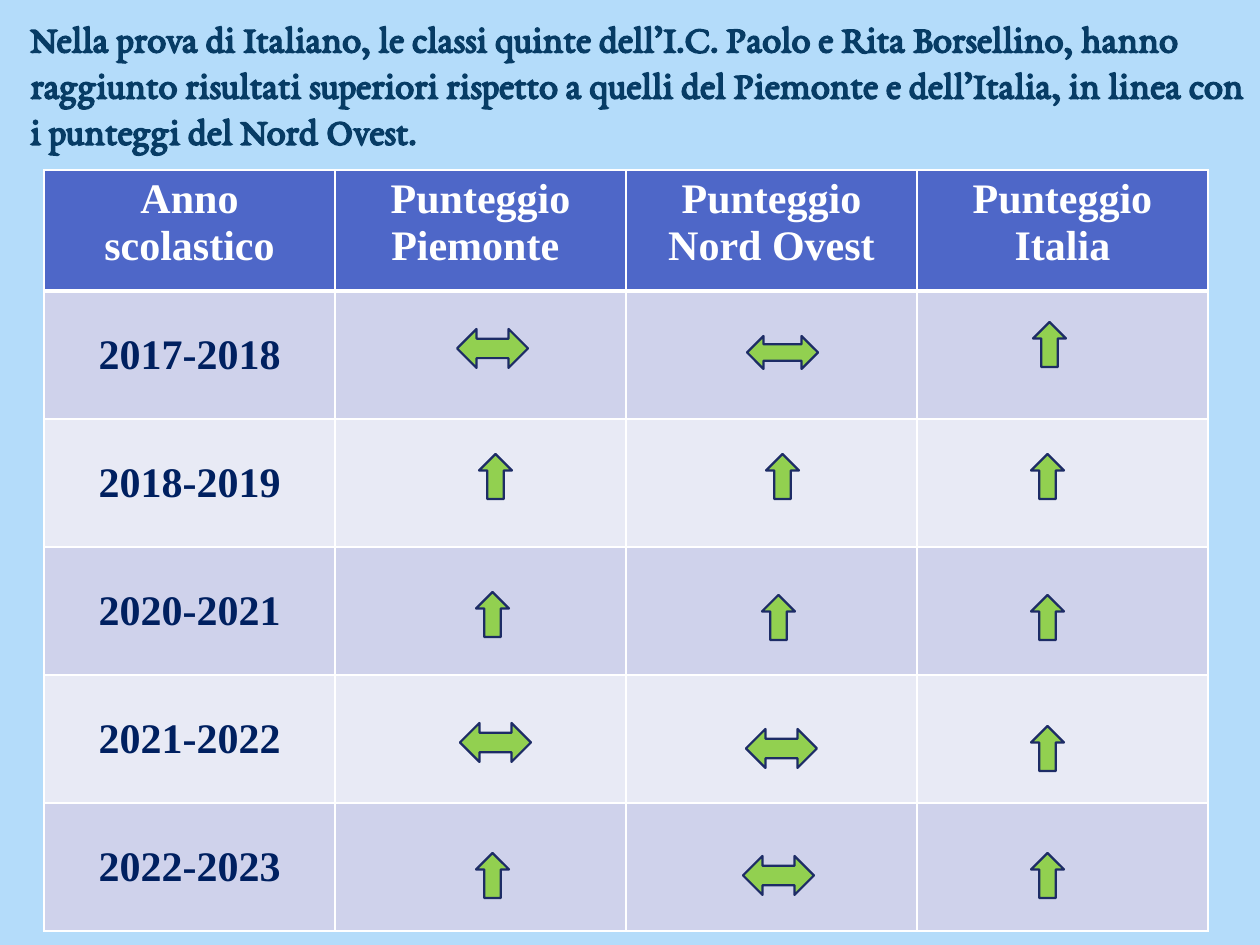
from lxml import etree
from pptx import Presentation
from pptx.dml.color import RGBColor
from pptx.enum.shapes import MSO_SHAPE as Shape
from pptx.enum.text import MSO_ANCHOR as Anchor, MSO_AUTO_SIZE as AutoSize, PP_ALIGN as Align
from pptx.oxml.ns import qn
from pptx.util import Emu, Pt

SCALE = 914400 / 126  # EMU per px
NAVY, WHITE, HEADER_BLUE = "002060", "FFFFFF", "4E67C8"
BANDS = ("CFD2EB", "E8EAF5")
HEADINGS = ("Anno scolastico", "Punteggio Piemonte ", "Punteggio Nord Ovest", "Punteggio Italia")
COLUMN_WIDTH, HEADER_HEIGHT, YEAR_HEIGHT = 291, 121, 128
INTRO = ("Nella prova di Italiano, le classi quinte dell’I.C. Paolo e Rita Borsellino, "
         "hanno raggiunto risultati superiori rispetto a quelli del Piemonte e dell’Italia, "
         "in linea con i punteggi del Nord Ovest.")

# Outcome kinds: higher than, or level with, the area's score
HIGHER = (Shape.UP_ARROW, 33, 45)
LEVEL = (Shape.LEFT_RIGHT_ARROW, 71, 39)
LEVEL_THIN = (Shape.LEFT_RIGHT_ARROW, 71, 33)

# Each year with its outcomes for Piemonte, Nord Ovest, Italia: kind, left, top
RESULTS = {
    "2017-2018": ((LEVEL, 457, 329), (LEVEL_THIN, 747, 336), (HIGHER, 1033, 322)),
    "2018-2019": ((HIGHER, 479, 454), (HIGHER, 766, 454), (HIGHER, 1031, 454)),
    "2020-2021": ((HIGHER, 476, 592), (HIGHER, 762, 595), (HIGHER, 1031, 595)),
    "2021-2022": ((LEVEL, 460, 723), (LEVEL, 746, 729), (HIGHER, 1031, 726)),
    "2022-2023": ((HIGHER, 476, 853), (LEVEL, 743, 856), (HIGHER, 1031, 853)),
}


def px(*lengths):
    return [Emu(round(length * SCALE)) for length in lengths]


def rgb(value):
    return RGBColor.from_string(value)


def format_text(frame, text, font, size, color, align=None):
    frame.text = text
    paragraph = frame.paragraphs[0]
    paragraph.alignment = align
    style = paragraph.runs[0].font
    style.name, style.size, style.bold = font, Pt(size), True
    style.color.rgb = rgb(color)


def style_cell(cell, fill, bottom=1):
    # Borders come before the fill in the cell properties
    properties = cell._tc.get_or_add_tcPr()
    for side, points in (("L", 1), ("R", 1), ("T", 1), ("B", bottom)):
        border = etree.SubElement(properties, qn(f"a:ln{side}"), w=str(Pt(points)))
        solid = etree.SubElement(border, qn("a:solidFill"))
        etree.SubElement(solid, qn("a:srgbClr"), val=WHITE)
    cell.fill.solid()
    cell.fill.fore_color.rgb = rgb(fill)


def add_intro(slide):
    intro = slide.shapes.add_textbox(*px(18, 8, 1252, 152)).text_frame
    intro.word_wrap = True
    intro.auto_size = AutoSize.SHAPE_TO_FIT_TEXT
    format_text(intro, INTRO, "EB Garamond", 22, "073C65")


def add_scores(slide):
    width = COLUMN_WIDTH * len(HEADINGS)
    height = HEADER_HEIGHT + YEAR_HEIGHT * len(RESULTS)
    scores = slide.shapes.add_table(len(RESULTS) + 1, len(HEADINGS), *px(44, 170, width, height)).table
    for column in scores.columns:
        column.width, = px(COLUMN_WIDTH)
    for index, row in enumerate(scores.rows):
        row.height, = px(YEAR_HEIGHT if index else HEADER_HEIGHT)

    # Header row
    for column, heading in enumerate(HEADINGS):
        cell = scores.cell(0, column)
        format_text(cell.text_frame, heading, "Times New Roman", 24, WHITE, Align.CENTER)
        style_cell(cell, HEADER_BLUE, bottom=3)

    # Year rows in alternating bands
    for row, year in enumerate(RESULTS, start=1):
        for column in range(len(HEADINGS)):
            style_cell(scores.cell(row, column), BANDS[(row - 1) % 2])
        year_cell = scores.cell(row, 0)
        year_cell.vertical_anchor = Anchor.MIDDLE
        format_text(year_cell.text_frame, year, "Times New Roman", 24, NAVY, Align.CENTER)


def add_outcome(slide, kind, left, top):
    preset, width, height = kind
    arrow = slide.shapes.add_shape(preset, *px(left, top, width, height))
    arrow.shadow.inherit = False
    arrow.fill.solid()
    arrow.fill.fore_color.rgb = rgb("92D050")
    arrow.line.color.rgb = rgb("1D2C66")
    arrow.line.width = Pt(1.25)


def main():
    deck = Presentation()
    deck.slide_width, deck.slide_height = px(1260, 945)
    slide = deck.slides.add_slide(deck.slide_layouts[6])
    slide.background.fill.solid()
    slide.background.fill.fore_color.rgb = rgb("B4DCFA")

    add_scores(slide)
    for outcomes in RESULTS.values():
        for outcome in outcomes:
            add_outcome(slide, *outcome)
    add_intro(slide)
    deck.save("out.pptx")


if __name__ == "__main__":
    main()
